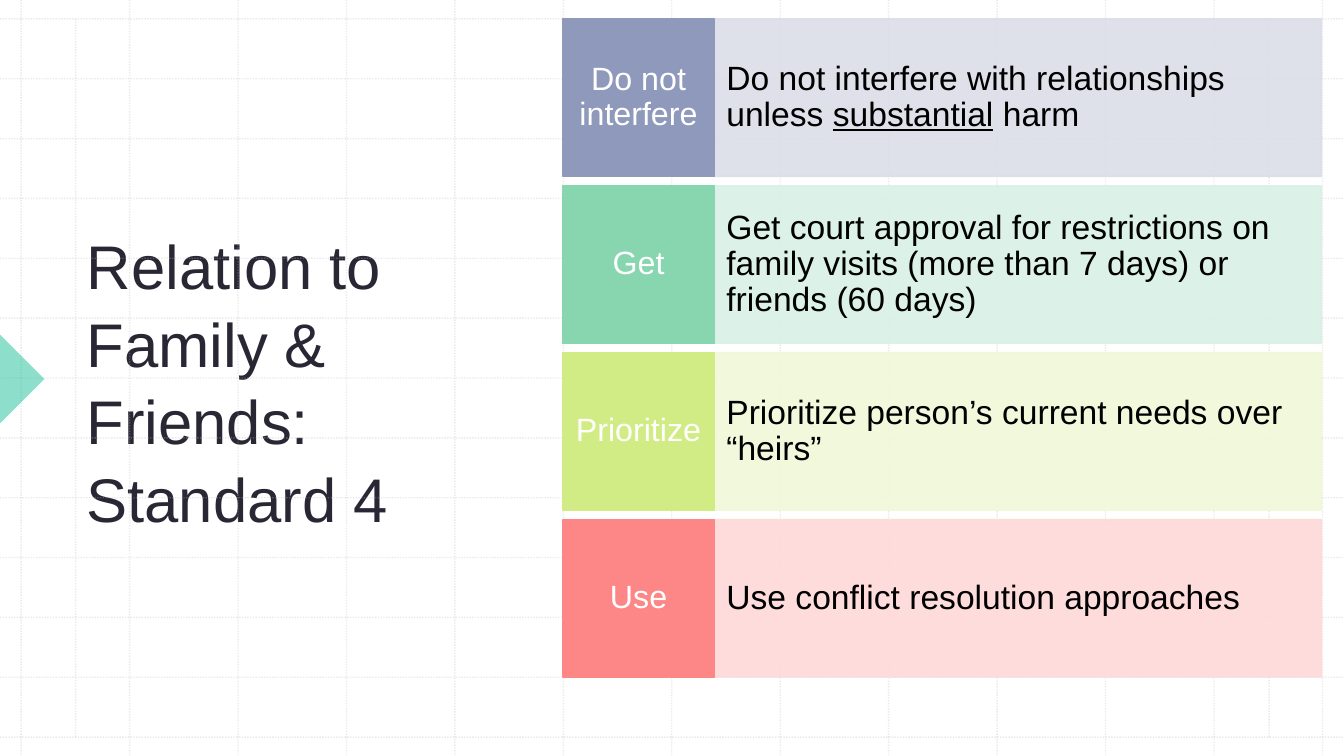
from lxml.etree import SubElement
from pptx import Presentation
from pptx.dml.color import RGBColor
from pptx.enum.dml import MSO_LINE
from pptx.enum.shapes import MSO_CONNECTOR, MSO_SHAPE
from pptx.enum.text import MSO_ANCHOR, MSO_AUTO_SIZE, PP_ALIGN
from pptx.oxml.ns import qn
from pptx.util import Pt

HUES = {
    "grid": "BCBCBC", "mark": "1EBE9B", "title": "2A2735",
    "black": "000000", "white": "FFFFFF",
    "blue": "8F99BB", "pale blue": "DBDEE7",
    "green": "87D6B0", "pale green": "D9F0E5",
    "lime": "D1EC84", "pale lime": "F0F8D8",
    "red": "FD8686", "pale red": "FED9D9",
}
WIDE, HIGH = 960, 540
ROWS = [
    ("blue", "Do not interfere",
     "Do not interfere with relationships unless _substantial_ harm"),
    ("green", "Get",
     "Get court approval for restrictions on family visits "
     "(more than 7 days) or friends (60 days)"),
    ("lime", "Prioritize", "Prioritize person’s current needs over “heirs”"),
    ("red", "Use", "Use conflict resolution approaches"),
]


class Board:
    face = "Arial"

    def __init__(self, slide):
        self.slide = slide

    def hue(self, name):
        return RGBColor.from_string(HUES[name])

    def fade(self, shape, part):
        for node in shape._element.spPr.iter(qn("a:srgbClr")):
            SubElement(node, qn("a:alpha"), val=str(part * 1000))

    def font(self, para, size, hue):
        para.font.name = self.face
        para.font.size = Pt(size)
        para.font.color.rgb = self.hue(hue)

    def rule(self, x1, y1, x2, y2):
        line = self.slide.shapes.add_connector(
            MSO_CONNECTOR.STRAIGHT, Pt(x1), Pt(y1), Pt(x2), Pt(y2))
        line.line.color.rgb = self.hue("grid")
        line.line.width = Pt(1)
        line.line.dash_style = MSO_LINE.ROUND_DOT
        self.fade(line, 30)
        SubElement(line._element.spPr, qn("a:effectLst"))

    def shape(self, kind, x, y, w, h, hue):
        shape = self.slide.shapes.add_shape(kind, Pt(x), Pt(y), Pt(w), Pt(h))
        shape.shadow.inherit = False
        shape.fill.solid()
        shape.fill.fore_color.rgb = self.hue(hue)
        shape.line.fill.background()
        return shape

    def mark(self, x, y, size):
        mark = self.shape(MSO_SHAPE.RIGHT_TRIANGLE, x, y, size, size, "mark")
        mark.rotation = 225
        self.fade(mark, 50)

    def title(self, text, x, y, w, h):
        title = self.slide.shapes.title
        title.left, title.top, title.width, title.height = map(Pt, (x, y, w, h))
        frame = title.text_frame
        frame.text = text
        frame.word_wrap = True
        frame.auto_size = MSO_AUTO_SIZE.NONE
        frame.vertical_anchor = MSO_ANCHOR.MIDDLE
        para = frame.paragraphs[0]
        para.alignment = PP_ALIGN.LEFT
        para.line_spacing = 1.05
        self.font(para, 44, "title")

    def box(self, x, y, w, h, hue, text, size, ink, align, pad):
        box = self.shape(MSO_SHAPE.RECTANGLE, x, y, w, h, hue)
        box.line.color.rgb = self.hue(hue)
        box.line.width = Pt(1)
        frame = box.text_frame
        frame.word_wrap = True
        frame.vertical_anchor = MSO_ANCHOR.MIDDLE
        frame.margin_left = frame.margin_right = Pt(pad[0])
        frame.margin_top = frame.margin_bottom = Pt(pad[1])
        para = frame.paragraphs[0]
        para.alignment = align
        para.line_spacing = 0.9
        self.font(para, size, ink)
        for i, part in enumerate(text.split("_")):
            run = para.add_run()
            run.text = part
            if i % 2:
                run.font.underline = True
        return box


def main():
    deck = Presentation()
    deck.slide_width, deck.slide_height = Pt(WIDE), Pt(HIGH)
    board = Board(deck.slides.add_slide(deck.slide_layouts[5]))

    for i in range(13):
        x, y = 15.1 + 77.46 * i, 13.5 + 42.75 * i
        board.rule(x, 0, x, HIGH)
        board.rule(0, y, WIDE, y)
    for x in (54, 906.5):
        board.rule(x, 13.5, x, 526.5)

    board.mark(-22.4, 248.3, 44.8)
    board.title("Relation to Family & Friends:\vStandard 4", 54.7, 56.9, 270, 428.4)

    for i, (hue, label, text) in enumerate(ROWS):
        y = 13.5 + 119.2 * i
        body = board.box(510.3, y, 433.6, 112.5, "pale " + hue, text,
                         24, "black", PP_ALIGN.LEFT, (8.6, 28.8))
        board.fade(body, 90)
        board.box(402, y, 108.3, 112.5, hue, label,
                  23, "white", PP_ALIGN.CENTER, (5.8, 10.8))
    deck.save("out.pptx")


if __name__ == "__main__":
    main()
